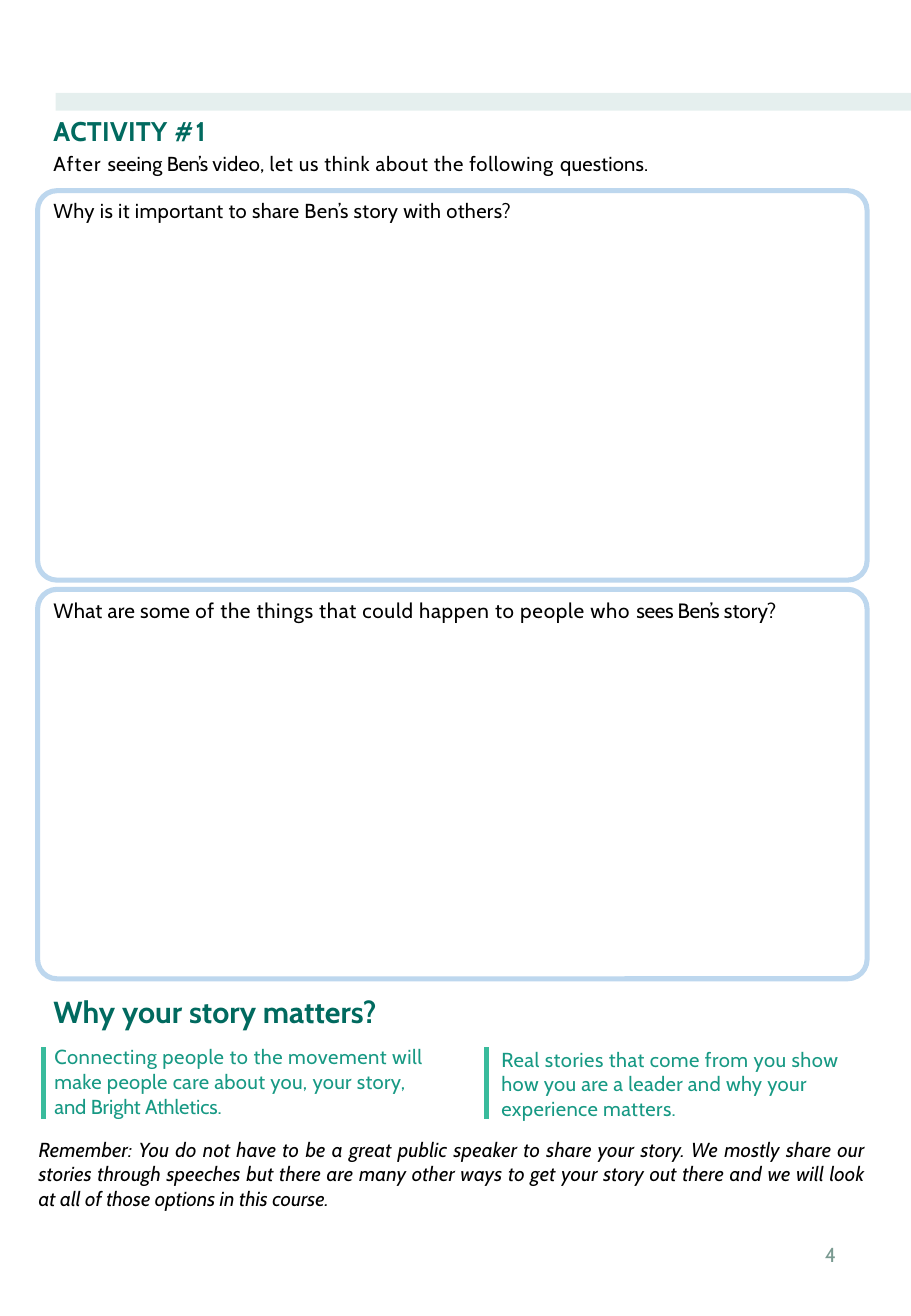
from lxml.etree import SubElement
from pptx import Presentation
from pptx.dml.color import RGBColor
from pptx.enum.shapes import MSO_CONNECTOR, MSO_SHAPE
from pptx.enum.text import MSO_ANCHOR, MSO_AUTO_SIZE, PP_ALIGN
from pptx.oxml.ns import qn
from pptx.util import Pt

DARK_GREEN = "016A5F"
TEXT_GREEN = "179984"
BAR_GREEN = "39BB9C"
FRAME_BLUE = "BDD7EE"
BLACK = "000000"


def color(value):
    return RGBColor.from_string(value)


def write_text(shape, box, runs, size, ink, bold=False, italic=False,
               align=PP_ALIGN.LEFT, line_spacing=1.0, anchor=MSO_ANCHOR.TOP):
    """Place the shape and fill it with (text, letter spacing in points) runs."""
    shape.left, shape.top, shape.width, shape.height = [Pt(length) for length in box]
    frame = shape.text_frame
    frame_format = {
        "word_wrap": True, "auto_size": MSO_AUTO_SIZE.NONE, "vertical_anchor": anchor,
        "margin_left": 0, "margin_top": 0, "margin_right": 0, "margin_bottom": 0,
    }
    for name, value in frame_format.items():
        setattr(frame, name, value)
    paragraph = frame.paragraphs[0]
    paragraph.alignment = align
    paragraph.line_spacing = line_spacing
    font_format = {"name": "Cabin", "size": Pt(size), "bold": bold, "italic": italic}
    for text, letter_spacing in runs:
        run = paragraph.add_run()
        run.text = text
        for name, value in font_format.items():
            setattr(run.font, name, value)
        run.font.color.rgb = color(ink)
        run._r.get_or_add_rPr().set("spc", str(round(letter_spacing * 100)))


presentation = Presentation()
presentation.slide_width = Pt(540)
presentation.slide_height = Pt(779.76)
slide = presentation.slides.add_slide(presentation.slide_layouts[5])
shapes = slide.shapes

# Pale band across the top
band = shapes.add_shape(MSO_SHAPE.RECTANGLE, Pt(33), Pt(55.1), Pt(507), Pt(10.5))
band.shadow.inherit = False
band.fill.solid()
band.fill.fore_color.rgb = color(DARK_GREEN)
band.line.fill.background()
band_color = band.fill._xPr.find(qn("a:solidFill"))[0]
SubElement(band_color, qn("a:alpha")).set("val", "10000")

# Answer frames
for frame_top in (113, 349.2):
    answer_frame = shapes.add_shape(
        MSO_SHAPE.ROUNDED_RECTANGLE, Pt(22.3), Pt(frame_top), Pt(491.7), Pt(230.8))
    answer_frame.adjustments[0] = 0.05
    answer_frame.shadow.inherit = False
    answer_frame.fill.background()
    answer_frame.line.color.rgb = color(FRAME_BLUE)
    answer_frame.line.width = Pt(3)

# Bars beside the two reasons
for bar_left in (25.9, 288.3):
    bar = shapes.add_connector(
        MSO_CONNECTOR.STRAIGHT, Pt(bar_left), Pt(620.6), Pt(bar_left), Pt(663.1))
    bar.line.color.rgb = color(BAR_GREEN)
    bar.line.width = Pt(3)
    SubElement(bar._element.spPr, qn("a:effectLst"))

# Headings, questions and notes
write_text(shapes.title, (31.7, 67.9, 455, 20),
           [("ACTIVITY ", 0.2), ("#1", 1.4)], 16, DARK_GREEN, bold=True)

texts = [
    ((31.7, 89.5, 455, 16),
     [("After ", 0.7), ("seeing ", 0), ("Ben’s ", -0.2), ("video, ", 0.1),
      ("let us think about the following ", 0.42), ("questions.", 0.1)],
     {"size": 12, "ink": BLACK}),
    ((31.7, 117.5, 455, 16),
     [("Why is it important to share Ben’s story with others?", 0.24)],
     {"size": 12, "ink": BLACK}),
    ((31.7, 354.1, 455, 16),
     [("What are some ", 0.14), ("of the things that could happen to people who ", 0.4),
      ("sees Ben’s ", -0.25), ("story?", 0)],
     {"size": 12.3, "ink": BLACK}),
    ((31.7, 588.5, 217, 23),
     [("Why your story matters?", 0)],
     {"size": 18, "ink": DARK_GREEN, "bold": True}),
    ((32.3, 618.9, 224, 45),
     [("Connecting people to the movement will ", 0.3),
      ("make people care about you, your story, ", 0.2),
      ("and Bright Athletics.", -0.05)],
     {"size": 12, "ink": TEXT_GREEN, "line_spacing": 1.01}),
    ((297.2, 620.2, 217, 45),
     [("Real stories that come from you show ", 0.28),
      ("how you are a leader and why your ", 0.2),
      ("experience matters.", 0.22)],
     {"size": 12, "ink": TEXT_GREEN, "line_spacing": 1.01}),
    ((22.9, 673.6, 491, 45),
     [("Remember: You do not have to be a great public speaker to share your story. "
       "We mostly share our ", 0.1),
      ("stories through speeches but there are many other ways to get your story out "
       "there and we will look ", 0.12),
      ("at all of those options in this course.", 0.04)],
     {"size": 12, "ink": BLACK, "italic": True, "align": PP_ALIGN.JUSTIFY,
      "line_spacing": 1.01}),
    ((381.2, 722.5, 114.5, 41.8),
     [("4", 0)],
     {"size": 12, "ink": "7A9A91", "align": PP_ALIGN.RIGHT, "anchor": MSO_ANCHOR.MIDDLE}),
]
for box, runs, text_format in texts:
    write_text(shapes.add_textbox(0, 0, 0, 0), box, runs, **text_format)

presentation.save("out.pptx")
